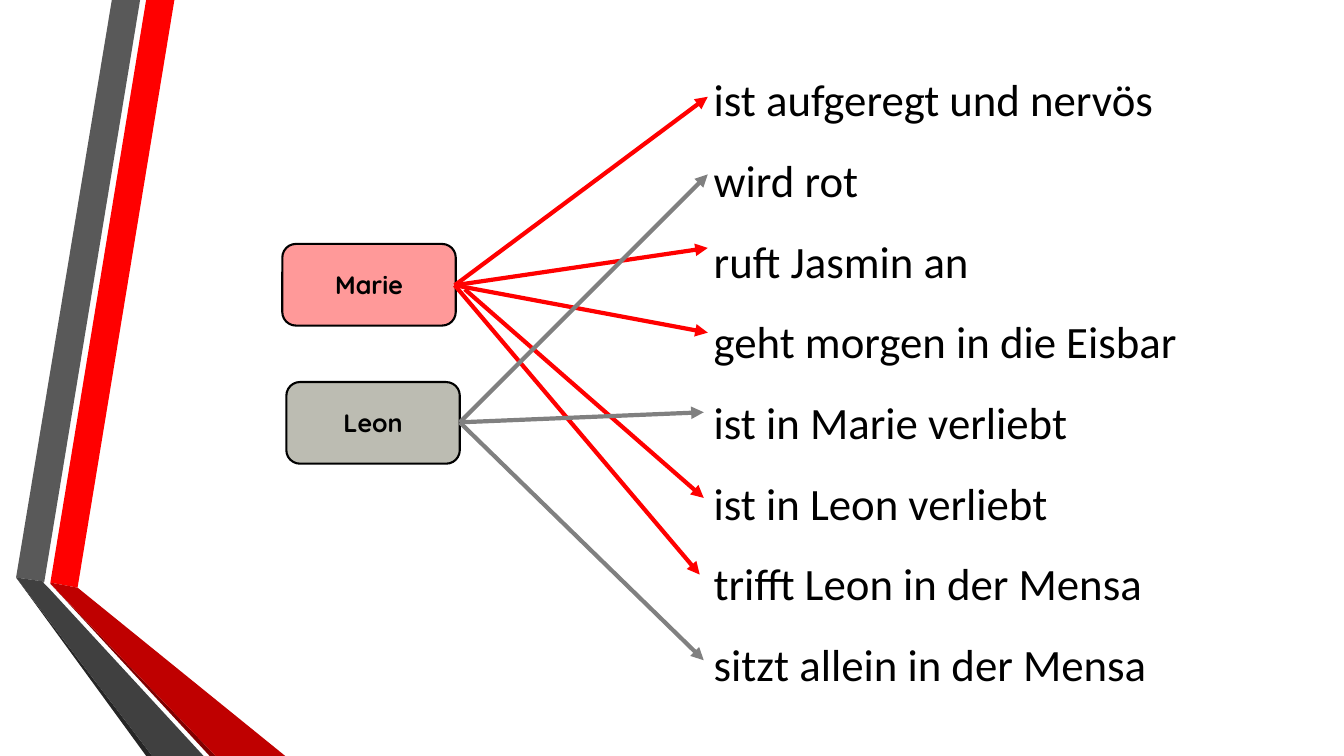
from lxml.etree import SubElement
from pptx import Presentation
from pptx.dml.color import RGBColor
from pptx.enum.shapes import MSO_CONNECTOR, MSO_SHAPE
from pptx.enum.text import MSO_ANCHOR, MSO_AUTO_SIZE, PP_ALIGN
from pptx.oxml.ns import qn
from pptx.util import Inches, Pt

RED, GREY, BLACK = "FF0000", "808080", "000000"

RIBBONS = [
    (RED, [(0.5, 5.78), (0.77, 5.83), (1.73, 0), (1.45, 0)]),
    ("595959", [(1.39, 0), (1.11, 0), (0.16, 5.73), (0.44, 5.77)]),
    ("262626", [(0.16, 5.73), (1.45, 7.5), (1.51, 7.5)]),
    ("800000", [(0.5, 5.79), (2.08, 7.5), (2.14, 7.5)]),
    ("BF0000", [(0.5, 5.79), (2.14, 7.5), (2.83, 7.5), (0.77, 5.83), (0.5, 5.78)]),
    ("404040", [(2.02, 7.5), (0.48, 5.83), (0.43, 5.78), (0.44, 5.77),
                (0.16, 5.73), (1.51, 7.5)]),
]

STATEMENTS = [
    "ist aufgeregt und nervös",
    "wird rot",
    "ruft Jasmin an",
    "geht morgen in die Eisbar",
    "ist in Marie verliebt",
    "ist in Leon verliebt",
    "trifft Leon in der Mensa",
    "sitzt allein in der Mensa",
]

PEOPLE = [("Marie", 2.8, 2.42, "FF9999"), ("Leon", 2.84, 3.79, "BCBCB2")]

MARIE, LEON = (4.51, 2.83), (4.56, 4.19)
MATCHES = [
    (RED, MARIE, (7.02, 0.96)),
    (RED, MARIE, (7.02, 2.46)),
    (RED, MARIE, (7.02, 3.3)),
    (RED, (4.61, 2.87), (6.98, 4.94)),
    (RED, MARIE, (6.94, 5.7)),
    (GREY, LEON, (7.02, 1.73)),
    (GREY, LEON, (6.98, 4.09)),
    (GREY, LEON, (6.98, 6.55)),
]


def color(code):
    return RGBColor.from_string(code)


class MatchingSlide:
    text_font, name_font = "Calibri", "Quicksand"
    text_size, name_size = 32, 18

    def __init__(self, slide):
        self.shapes = slide.shapes

    def paint(self, shape, fill):
        shape.shadow.inherit = False
        shape.fill.solid()
        shape.fill.fore_color.rgb = color(fill)

    def add_words(self, paragraph, words, font, size, bold=False):
        run = paragraph.add_run()
        run.text = words
        run.font.name = font
        run.font.size = Pt(size)
        run.font.bold = bold
        run.font.color.rgb = color(BLACK)

    def ribbon(self, fill, points):
        corners = [(x * 100, y * 100) for x, y in points]
        outline = self.shapes.build_freeform(*corners[0], scale=Inches(0.01))
        outline.add_line_segments(corners[1:], close=True)
        band = outline.convert_to_shape()
        self.paint(band, fill)
        band.line.fill.background()

    def statements(self, lines, left, top, width, height):
        box = self.shapes.add_textbox(*map(Inches, (left, top, width, height)))
        frame = box.text_frame
        frame.word_wrap = True
        frame.auto_size = MSO_AUTO_SIZE.SHAPE_TO_FIT_TEXT
        for index, line in enumerate(lines):
            paragraph = frame.add_paragraph() if index else frame.paragraphs[0]
            paragraph.line_spacing = 1.5
            self.add_words(paragraph, line, self.text_font, self.text_size)

    def person(self, name, left, top, fill):
        card = self.shapes.add_shape(
            MSO_SHAPE.ROUNDED_RECTANGLE, *map(Inches, (left, top, 1.72, 0.81)))
        self.paint(card, fill)
        card.line.color.rgb = color(BLACK)
        card.line.width = Pt(1.5)
        card.text_frame.vertical_anchor = MSO_ANCHOR.MIDDLE
        paragraph = card.text_frame.paragraphs[0]
        paragraph.alignment = PP_ALIGN.CENTER
        self.add_words(paragraph, name, self.name_font, self.name_size, bold=True)

    def arrow(self, stroke, start, end):
        link = self.shapes.add_connector(
            MSO_CONNECTOR.STRAIGHT, *map(Inches, start + end))
        link.line.color.rgb = color(stroke)
        link.line.width = Pt(3)
        properties = link._element.spPr
        SubElement(properties.find(qn("a:ln")), qn("a:tailEnd"), type="triangle")
        SubElement(properties, qn("a:effectLst"))


def main():
    deck = Presentation()
    deck.slide_width, deck.slide_height = Inches(13.33), Inches(7.5)
    page = MatchingSlide(deck.slides.add_slide(deck.slide_layouts[6]))
    for fill, points in RIBBONS:
        page.ribbon(fill, points)
    page.statements(STATEMENTS, 6.98, 0.4, 5.45, 7.1)
    for person in PEOPLE:
        page.person(*person)
    for match in MATCHES:
        page.arrow(*match)
    deck.save("out.pptx")


if __name__ == "__main__":
    main()
